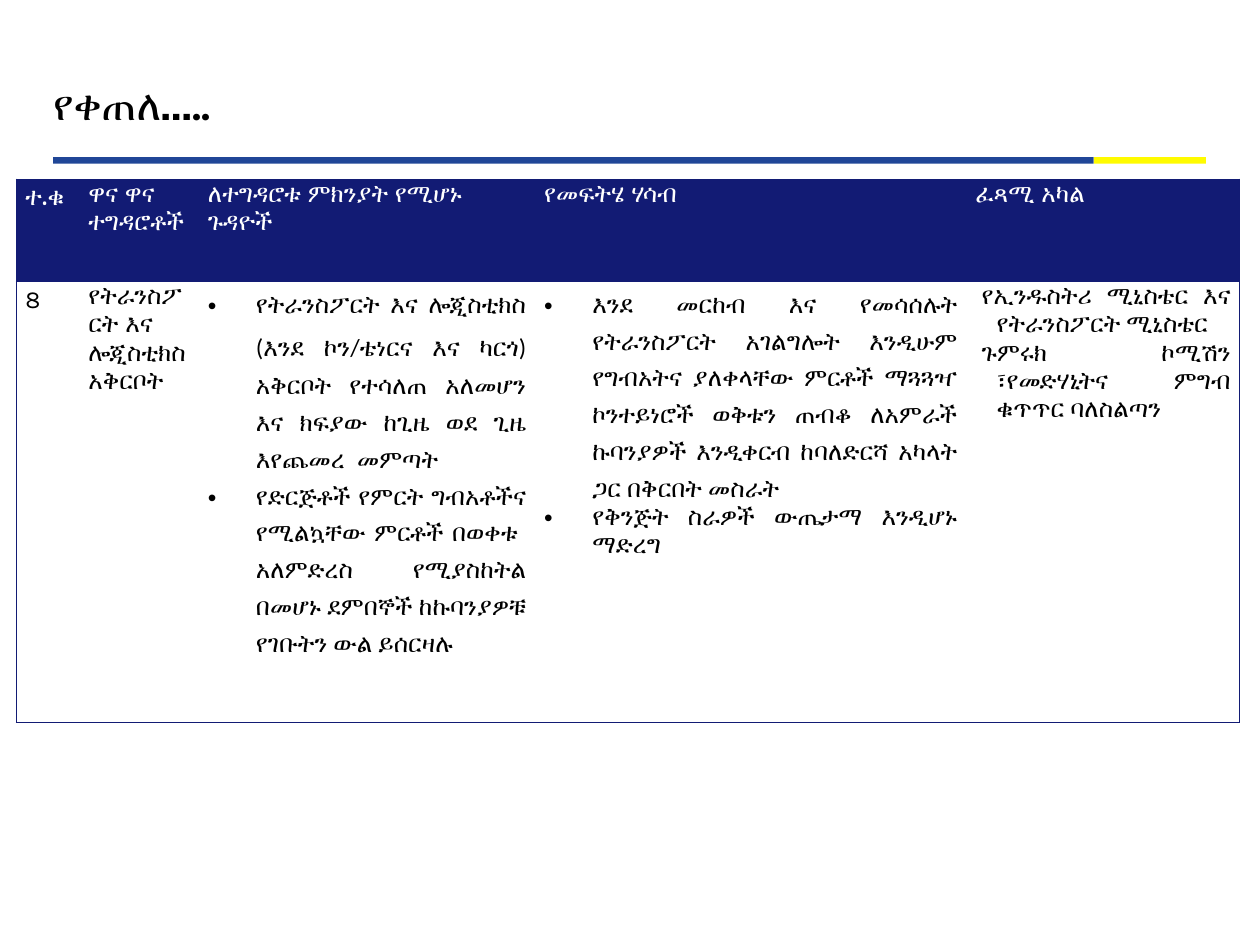
from lxml.etree import SubElement
from pptx import Presentation
from pptx.dml.color import RGBColor
from pptx.enum.shapes import MSO_SHAPE
from pptx.enum.text import MSO_ANCHOR, PP_ALIGN
from pptx.oxml.ns import qn
from pptx.util import Cm, Pt

BLUE = RGBColor(0x20, 0x46, 0x97)
YELLOW = RGBColor(0xFF, 0xFB, 0x00)
NAVY = RGBColor(0x12, 0x1B, 0x74)
WHITE = RGBColor(0xFF, 0xFF, 0xFF)
BLACK = RGBColor(0x00, 0x00, 0x00)


def add_run(para, text, font_name, size, color, bold):
    run = para.add_run()
    run.text = text
    run.font.name = font_name
    run.font.size = Pt(size)
    run.font.color.rgb = color
    run.font.bold = bold


def draw_borders(cell, sides):
    """Line the given sides (L, R, T, B) in navy and clear the others."""
    properties = cell._tc.get_or_add_tcPr()
    for position, side in enumerate("LRTB"):
        line = properties.makeelement(qn(f"a:ln{side}"), {"w": str(Pt(0.5))})
        if side in sides:
            fill = SubElement(line, qn("a:solidFill"))
            SubElement(fill, qn("a:srgbClr"), val=str(NAVY))
        else:
            SubElement(line, qn("a:noFill"))
        properties.insert(position, line)


deck = Presentation()
deck.slide_width, deck.slide_height = Cm(25.4), Cm(19.05)
slide = deck.slides.add_slide(deck.slide_layouts[6])

# Two-coloured rule under the title
for left, width, color in [(1.07, 20.98, BLUE), (22.05, 2.26, YELLOW)]:
    bar = slide.shapes.add_shape(MSO_SHAPE.RECTANGLE, Cm(left), Cm(3.17), Cm(width), Cm(0.13))
    bar.shadow.inherit = False
    bar.fill.solid()
    bar.fill.fore_color.rgb = color
    bar.line.fill.background()

title_box = slide.shapes.add_textbox(Cm(1.07), Cm(1.27), Cm(21.16), Cm(1.85))
frame = title_box.text_frame
frame.word_wrap = True
frame.vertical_anchor = MSO_ANCHOR.MIDDLE
frame.margin_left = frame.margin_right = frame.margin_top = frame.margin_bottom = 0
title = frame.paragraphs[0]
title.line_spacing = 0.8
add_run(title, "የቀጠለ…..", "Karla", 24, BLACK, True)

# Table contents
HEADERS = ["ተ.ቁ", "ዋና ዋና ተግዳሮቶች", "ለተግዳሮቱ ምክንያት የሚሆኑ ጉዳዮች", "የመፍትሄ ሃሳብ", "ፈጻሚ አካል"]
JUSTIFY, LEFT = PP_ALIGN.JUSTIFY, PP_ALIGN.LEFT
BULLET, HANGING, PLAIN = (0.97, -0.97), (0.43, -0.3), (0, 0)

# Each paragraph: alignment, (margin, indent) in cm, line spacing, bold, runs
header_row = [[(LEFT, PLAIN, 1.15, True, [(text, "Cambria")])] for text in HEADERS]
body_row = [
    [(JUSTIFY, PLAIN, 1.15, False, [("8", "Karla")])],
    [(LEFT, PLAIN, 1.15, True, [("የትራንስፖርት እና ሎጂስቲክስ አቅርቦት", "Arial")])],
    [
        (JUSTIFY, BULLET, 1.5, False, [
            ("የትራንስፖርት እና ሎጂስቲክስ ", "Arial"),
            ("(", "Calibri"),
            ("እንደ ኮን", "Arial"),
            ("/", "Calibri"),
            ("ቴነርና እና ካርጎ", "Arial"),
            (") ", "Calibri"),
            ("አቅርቦት የተሳለጠ አለመሆን እና ክፍያው ከጊዜ ወደ ጊዜ እየጨመረ  መምጣት", "Arial"),
        ]),
        (JUSTIFY, BULLET, 1.5, False, [
            ("የድርጅቶች የምርት ግብአቶችና የሚልኳቸው ምርቶች በወቀቱ  አለምድረስ "
             "የሚያስከትል በመሆኑ ደምበኞች ከኩባንያዎቹ የገቡትን ውል ይሰርዛሉ", "Arial"),
        ]),
    ],
    [
        (JUSTIFY, BULLET, 1.5, False, [
            ("እንደ መርከብ እና የመሳሰሉት የትራንስፖርት አገልግሎት እንዲሁም የግብአትና "
             "ያለቀላቸው ምርቶች ማጓጓዣ ኮንተይነሮች ወቅቱን ጠብቆ ለአምራች ኩባንያዎች "
             "እንዲቀርብ ከባለድርሻ አካላት ጋር በቅርበት መስራት", "Arial"),
        ]),
        (JUSTIFY, BULLET, 1.15, False, [("የቅንጅት ስራዎች ውጤታማ እንዲሆኑ ማድረግ", "Arial")]),
    ],
    [
        (JUSTIFY, HANGING, 1.15, False, [("የኢንዱስትሪ ሚኒስቴር እና የትራንስፖርት ሚኒስቴር", "Arial")]),
        (JUSTIFY, HANGING, 1.15, False, [("ጉምሩክ ኮሚሽን ፣የመድሃኒትና ምግብ ቁጥጥር ባለስልጣን", "Arial")]),
    ],
]
rows = [header_row, body_row]
column_widths = [1.27, 2.41, 6.78, 8.69, 5.51]
row_heights = [2.06, 5.13]

table = slide.shapes.add_table(
    len(rows), len(column_widths), Cm(0.33), Cm(3.61), Cm(sum(column_widths)), Cm(sum(row_heights))
).table
for column, width in zip(table.columns, column_widths):
    column.width = Cm(width)
for row, height in zip(table.rows, row_heights):
    row.height = Cm(height)

for row_index, row in enumerate(rows):
    is_header = row_index == 0
    for column_index, paragraphs in enumerate(row):
        cell = table.cell(row_index, column_index)
        cell.margin_left = cell.margin_right = Cm(0.18)
        cell.margin_top = cell.margin_bottom = 0
        cell.fill.solid()
        cell.fill.fore_color.rgb = NAVY if is_header else WHITE
        sides = "T" if is_header else "TB"
        if column_index == 0:
            sides += "L"
        if column_index == len(row) - 1:
            sides += "R"
        draw_borders(cell, sides)

        for index, (alignment, indents, spacing, bold, runs) in enumerate(paragraphs):
            para = cell.text_frame.paragraphs[0] if index == 0 else cell.text_frame.add_paragraph()
            para.alignment = alignment
            para.line_spacing = spacing
            properties = para._p.get_or_add_pPr()
            margin, indent = indents
            properties.set("marL", str(Cm(margin)))
            properties.set("indent", str(Cm(indent)))
            if indents == BULLET:
                SubElement(properties, qn("a:buFont"), typeface="Arial")
                SubElement(properties, qn("a:buChar"), char="•")
            for text, font_name in runs:
                add_run(para, text, font_name, 14, WHITE if is_header else BLACK, bold)

deck.save("out.pptx")
